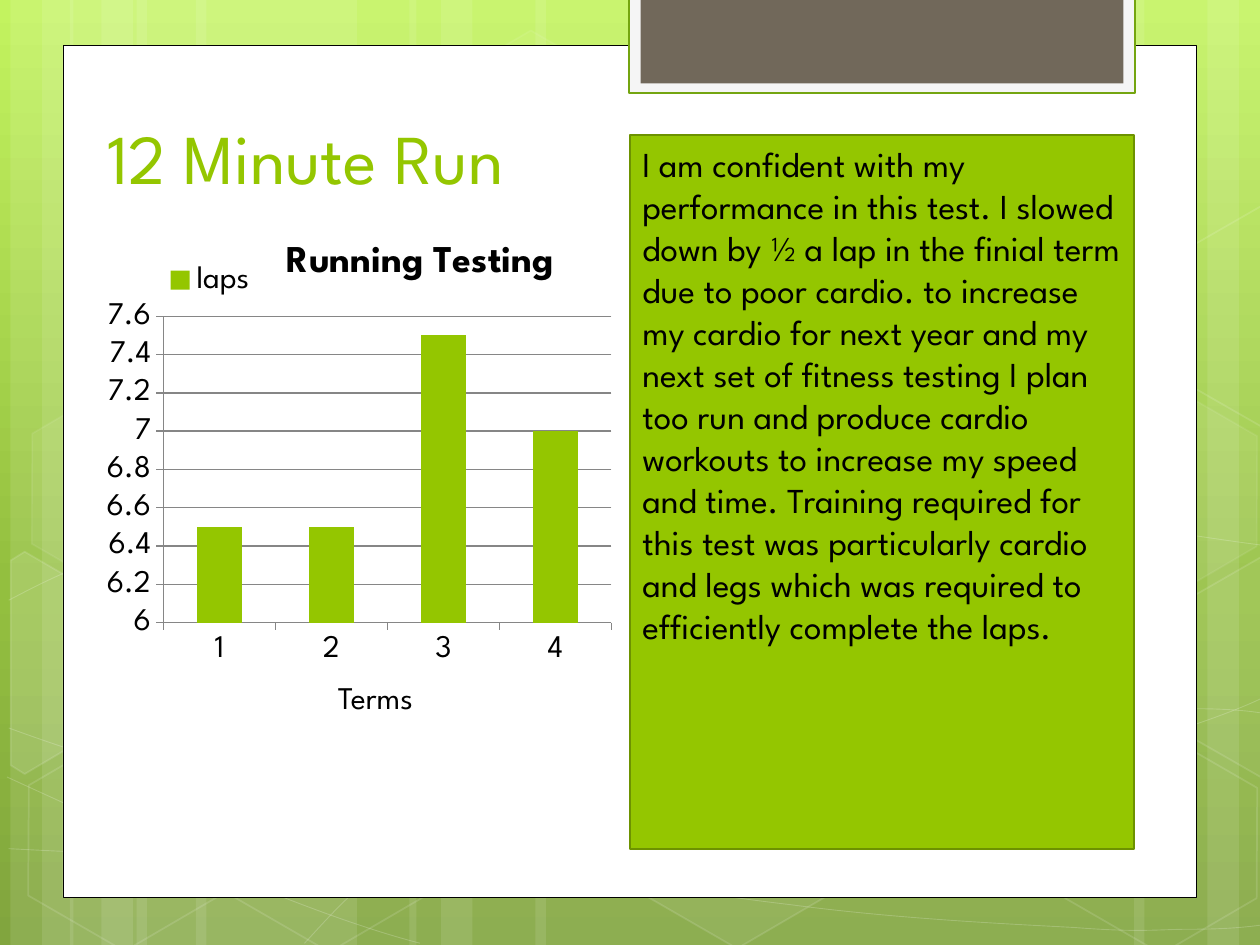
import copy
import math
import pptx
import pptx.chart.data
import pptx.dml.color
import pptx.enum.chart
import pptx.enum.shapes
import pptx.enum.text
import pptx.oxml
import pptx.oxml.ns
import pptx.util

Pt = pptx.util.Pt
RGB = pptx.dml.color.RGBColor
KIND = pptx.enum.shapes.MSO_SHAPE
ANCHOR = pptx.enum.text.MSO_ANCHOR
AUTO = pptx.enum.text.MSO_AUTO_SIZE
CHART = pptx.enum.chart
qn = pptx.oxml.ns.qn

WHITE = RGB(0xFF, 0xFF, 0xFF)
BLACK = RGB(0, 0, 0)
LIME = RGB(0x94, 0xC6, 0x00)
MOSS = RGB(0x6D, 0x92, 0x00)
LEAF = RGB(0x74, 0xA5, 0x10)
PALE = RGB(0xF5, 0xF5, 0xF5)
BROWN = RGB(0x71, 0x68, 0x5A)
GREY = RGB(0x86, 0x86, 0x86)
SKY = [(0, RGB(0xC3, 0xF3, 0x5F)), (0.62, RGB(0x93, 0xBF, 0x3F)),
       (1, RGB(0x81, 0xA5, 0x3E))]
FONT = "League Spartan"
STORY = (
    "I am confident with my performance in this test. I slowed down by ½ a lap "
    "in the finial term due to poor cardio. to increase my cardio for next year "
    "and my next set of fitness testing I plan too run and produce cardio workouts "
    "to increase my speed and time. Training required for this test was "
    "particularly cardio and legs which was required to efficiently complete the laps.")
WAVES = [
    [(5, 485), (44, 487), (83, 489), (137, 488), (191, 487), (258, 486), (330, 479),
     (402, 472), (504, 458), (570, 444), (636, 431), (703, 409), (725, 397)],
    [(5, 343), (26, 332), (47, 321), (87, 310), (128, 300), (186, 284), (250, 279),
     (314, 274), (392, 273), (471, 279), (550, 284), (682, 307), (725, 312)],
    [(4, 444), (91, 484), (178, 523), (240, 539)],
    [(5, 416), (27, 424), (50, 432), (92, 444), (134, 454), (197, 472), (257, 485),
     (317, 497), (392, 510), (452, 517), (512, 525), (576, 528), (614, 530),
     (652, 533), (662, 531), (680, 531), (699, 531), (712, 530), (725, 528)],
    [(174, 539), (187, 525), (200, 510), (217, 498), (235, 485), (259, 470), (279, 460),
     (300, 450), (312, 446), (338, 438), (364, 431), (413, 421), (438, 416),
     (464, 411), (467, 411), (490, 410), (512, 408), (547, 405), (572, 405),
     (597, 405), (638, 405), (638, 405), (654, 405), (670, 405), (686, 405),
     (699, 405), (711, 406), (718, 407), (724, 408), (722, 407), (724, 408)],
]
HEXES = [(240.5, 26, 4, 8), (358, 424, 6, 12), (8, 425.5, 0, 12), (10, 224.5, 7, 8),
         (125, 426, 0, 12), (542, 326, 10, 12), (600.5, 427, 0, 12), (600.5, 226, 7, 8)]
LEFT = [(6, 320), (14, 315), (69, 347), (68, 410), (14, 442), (6, 437)]
RIGHT = [(667, 349), (721, 318), (726, 321), (726, 441), (721, 444), (667, 413)]
CUTS = [(LEFT, (26, 385), 0, 10), (RIGHT, (709, 374.5), 0, 4),
        (RIGHT, (709, 374.5), 200.5, 0)]


def fade(node, alpha):
    if alpha < 100:
        tag = pptx.oxml.ns.nsdecls("a")
        node.find(".//" + qn("a:srgbClr")).append(
            pptx.oxml.parse_xml(f'<a:alpha {tag} val="{alpha * 1000}"/>'))


def paint(shape, fill=None, line=None, wide=1, clear=100, dim=100):
    shape.shadow.inherit = False
    prop = shape._element.spPr
    if fill is None or not clear:
        shape.fill.background()
    else:
        shape.fill.solid()
        shape.fill.fore_color.rgb = fill
        fade(prop.find(qn("a:solidFill")), clear)
    if line is None:
        shape.line.fill.background()
    else:
        shape.line.color.rgb = line
        shape.line.width = Pt(wide)
        fade(prop.find(qn("a:ln")), dim)
    return shape


def block(slide, box, kind=KIND.RECTANGLE, **look):
    return paint(slide.shapes.add_shape(kind, *map(Pt, box)), **look)


def write(slide, box, text, size=18, color=BLACK, anchor=ANCHOR.TOP, auto=AUTO.NONE):
    frame = slide.shapes.add_textbox(*map(Pt, box)).text_frame
    frame.word_wrap = True
    frame.auto_size = auto
    frame.vertical_anchor = anchor
    run = frame.paragraphs[0].add_run()
    run.text = text
    run.font.name, run.font.size, run.font.color.rgb = FONT, Pt(size), color


def trace(slide, points, close, **look):
    spots = [(round(x * 100), round(y * 100)) for x, y in points]
    pen = slide.shapes.build_freeform(*spots[0], scale=Pt(0.01))
    pen.add_line_segments(spots[1:], close=close)
    return paint(pen.convert_to_shape(), **look)


def bend(shape):
    route = shape._element.find(".//" + qn("a:path"))
    lines = route.findall(qn("a:lnTo"))
    for i in range(0, len(lines), 3):
        curve = pptx.oxml.parse_xml(f'<a:cubicBezTo {pptx.oxml.ns.nsdecls("a")}/>')
        route.append(curve)
        for line in lines[i:i + 3]:
            curve.append(line[0])
            route.remove(line)


def turn(points, hub, angle):
    c, s = math.cos(math.radians(angle)), math.sin(math.radians(angle))
    return [(hub[0] + (x - hub[0]) * c - (y - hub[1]) * s,
             hub[1] + (x - hub[0]) * s + (y - hub[1]) * c) for x, y in points]


def sky(slide):
    fill = slide.background.fill
    fill.gradient()
    fill.gradient_angle = 270
    stops = slide._element.find(".//" + qn("a:gsLst"))
    stops.append(copy.deepcopy(stops[0]))
    for stop, (spot, color) in zip(fill.gradient_stops, SKY):
        stop.position, stop.color.rgb = spot, color


def bands(slide, box):
    x, y, w, h = box
    trio = [(78, 126), (6, 36), (24, 60)]
    bars = trio + [(a + 34, b) for a, b in trio]
    bars += [(528, 126), (690, 36), (648, 60), (306, 222), (234, 36), (252, 60)]
    for left, wide in bars:
        block(slide, (x + left, y, wide, h), fill=WHITE, clear=10)


def web(slide, box):
    x, y, w, h = box
    for wave in WAVES:
        bend(trace(slide, [(x + a, y + b) for a, b in wave], False,
                   line=WHITE, wide=0.5, dim=20))
    for left, top, clear, dim in HEXES:
        cell = block(slide, (x + left, y + top, 126, 109.5), KIND.HEXAGON,
                     fill=WHITE, clear=clear, line=WHITE, dim=dim)
        cell.adjustments[0] = 0.285
        cell.rotation = 30
    for edge, hub, rise, clear in CUTS:
        cell = trace(slide, [(x + a, y + b - rise) for a, b in turn(edge, hub, -30)],
                     True, fill=WHITE, clear=clear, line=WHITE, dim=12)
        cell.rotation = 30


def card(slide, box):
    x, y, w, h = box
    block(slide, box, fill=WHITE, line=BLACK, wide=0.5)
    block(slide, (x + 323.2, y - 27.4, 289.4, 54.8), fill=PALE, line=LEAF, wide=1.25)
    block(slide, (x + 330, y - 27.4, 276, 49), fill=BROWN)
    write(slide, (x + 18.2, y + 22.2, 553, 69), "12 Minute Run", size=40, color=LIME,
          anchor=ANCHOR.BOTTOM)


def place(part, size, box, inner=False):
    layout = part.find(qn("c:layout"))
    if layout is not None:
        part.remove(layout)
    goal = '<c:layoutTarget val="inner"/>' if inner else ""
    sizes = "".join(f'<c:{k} val="{v / size[i % 2]}"/>'
                    for i, (k, v) in enumerate(zip("xywh", box)))
    node = pptx.oxml.parse_xml(
        f'<c:layout {pptx.oxml.ns.nsdecls("c")}><c:manualLayout>{goal}'
        f'<c:xMode val="edge"/><c:yMode val="edge"/>{sizes}</c:manualLayout></c:layout>')
    part.insert(0 if inner else 1, node)


def graph(slide, box):
    x, y, w, h = box
    data = pptx.chart.data.CategoryChartData()
    data.categories = ["1", "2", "3", "4"]
    data.add_series("laps", (6.5, 6.5, 7.5, 7))
    chart = slide.shapes.add_chart(CHART.XL_CHART_TYPE.COLUMN_CLUSTERED,
                                   *map(Pt, box), data).chart
    chart.font.name, chart.font.size = FONT, Pt(18)
    chart.font.color.rgb = BLACK
    chart.chart_title.text_frame.text = "Running Testing"
    font = chart.chart_title.text_frame.paragraphs[0].runs[0].font
    font.name, font.size, font.bold = FONT, Pt(21.6), True
    font.color.rgb = BLACK
    chart.has_legend = True
    chart.legend.position = CHART.XL_LEGEND_POSITION.RIGHT
    chart.legend.include_in_layout = False
    place(chart.chart_title._element, (w, h), (106, 2.3))
    place(chart.legend._element, (w, h), (38.5, 15.8, 55, 25))
    place(chart._chartSpace.chart.plotArea, (w, h), (39.4, 49, 256, 175), inner=True)
    plot = chart.plots[0]
    plot.gap_width = 150
    plot.vary_by_categories = False
    fill = plot.series[0].format.fill
    fill.solid()
    fill.fore_color.rgb = LIME
    axis = chart.value_axis
    axis.minimum_scale, axis.maximum_scale, axis.major_unit = 6, 7.6, 0.2
    axis.tick_labels.number_format = "General"
    axis.tick_labels.number_format_is_linked = False
    for item in (axis, chart.category_axis, axis.major_gridlines):
        item.format.line.color.rgb = GREY
        item.format.line.width = Pt(0.75)
    write(slide, (x + 132, y + h, 66, 29), "Terms", auto=AUTO.SHAPE_TO_FIT_TEXT)


def story(slide, box):
    x, y, w, h = box
    block(slide, box, fill=LIME, line=MOSS, wide=1.25)
    write(slide, (x, y + 0.75, w, 371), STORY, size=20, auto=AUTO.SHAPE_TO_FIT_TEXT)


def main():
    deck = pptx.Presentation()
    deck.slide_width, deck.slide_height = Pt(720), Pt(540)
    slide = deck.slides.add_slide(deck.slide_layouts[6])
    page = (0, 0, 720, 540)
    sky(slide)
    bands(slide, page)
    web(slide, page)
    card(slide, (36, 26, 648, 487))
    graph(slide, (54, 131.8, 366, 252))
    story(slide, (360, 77, 288, 408))
    deck.save("out.pptx")


if __name__ == "__main__":
    main()
